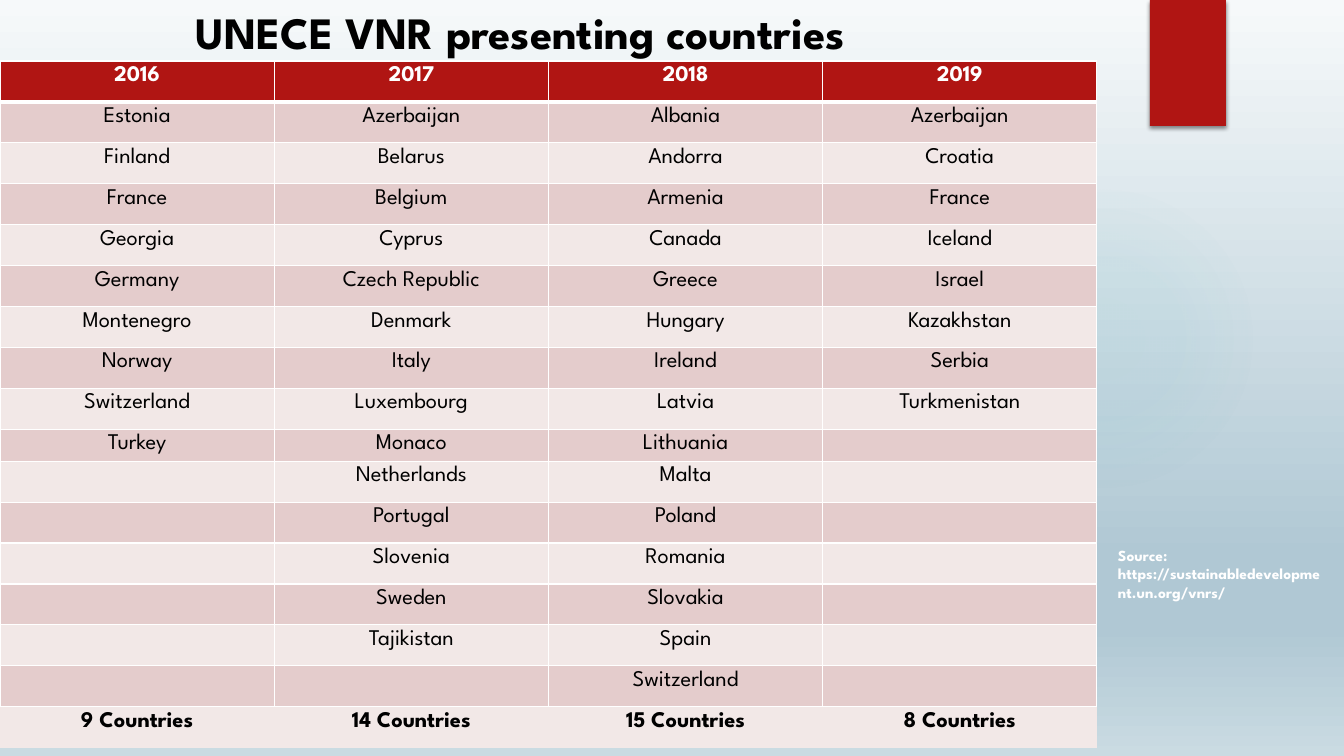
import pptx
import pptx.util
import pptx.oxml
import pptx.oxml.ns
from pptx.dml.color import RGBColor
from pptx.enum.shapes import MSO_SHAPE
from pptx.enum.text import MSO_ANCHOR, PP_ALIGN

FONT = "League Spartan"
COLORS = {"red": "B01513", "dark_band": "E4CCCC", "light_band": "F2E8E7",
          "white": "FFFFFF", "black": "000000", "glow": "50B9C1"}
SKY = [(0, "F6F9FA", 100), (74, "B0C8D4", 100), (83, "B0C8D4", 100), (100, "CADBE2", 100)]
GLOW = [(0, COLORS["glow"], 7), (36, COLORS["glow"], 6), (69, COLORS["glow"], 0)]

TITLE = "UNECE VNR presenting countries"
SOURCE = "Source: https://sustainabledevelopment.un.org/vnrs/"
COUNTRIES = {
    "2016": ["Estonia", "Finland", "France", "Georgia", "Germany", "Montenegro",
             "Norway", "Switzerland", "Turkey"],
    "2017": ["Azerbaijan", "Belarus", "Belgium", "Cyprus", "Czech Republic", "Denmark",
             "Italy", "Luxembourg", "Monaco", "Netherlands", "Portugal", "Slovenia",
             "Sweden", "Tajikistan"],
    "2018": ["Albania", "Andorra", "Armenia", "Canada", "Greece", "Hungary", "Ireland",
             "Latvia", "Lithuania", "Malta", "Poland", "Romania", "Slovakia", "Spain",
             "Switzerland"],
    "2019": ["Azerbaijan", "Croatia", "France", "Iceland", "Israel", "Kazakhstan",
             "Serbia", "Turkmenistan"],
}
TABLE_X, TABLE_Y, TABLE_W, TABLE_H = 0, 61, 1097, 687
SHORT_ROW, SHORT_H = 9, 32
CELL_TOP = 5

qn = pptx.oxml.ns.qn
NS = pptx.oxml.ns.nsdecls("a")


def px(n):
    return pptx.util.Emu(round(n * 914400 / 100.8))


def box(*lengths):
    return [px(n) for n in lengths]


def set_text(tf, text, size=16, color="black", bold=False, align=PP_ALIGN.LEFT):
    tf.word_wrap = True
    p = tf.paragraphs[0]
    p.alignment = align
    r = p.add_run()
    r.text = text
    r.font.name = FONT
    r.font.size = pptx.util.Pt(size)
    r.font.bold = bold
    r.font.color.rgb = RGBColor.from_string(COLORS[color])


def set_gradient(element, stops, direction):
    """Replace the solid fill inside element by a gradient of (percent, colour, alpha) stops."""
    gs = "".join(f'<a:gs pos="{pos * 1000}"><a:srgbClr val="{color}">'
                 f'<a:alpha val="{alpha * 1000}"/></a:srgbClr></a:gs>'
                 for pos, color, alpha in stops)
    grad = pptx.oxml.parse_xml(
        f'<a:gradFill {NS} rotWithShape="1"><a:gsLst>{gs}</a:gsLst>{direction}</a:gradFill>')
    solid = element.find(".//" + qn("a:solidFill"))
    solid.getparent().replace(solid, grad)


def add_shape(s, kind, *lengths, color):
    sp = s.shapes.add_shape(kind, *box(*lengths))
    sp.shadow.inherit = False
    sp.fill.solid()
    sp.fill.fore_color.rgb = RGBColor.from_string(COLORS[color])
    sp.line.fill.background()
    return sp


def set_borders(cell, widths):
    """Draw white borders; widths gives points for left, right, top and bottom."""
    tcPr = cell._tc.get_or_add_tcPr()
    for i, (side, width) in enumerate(zip("LRTB", widths)):
        fill = (f'<a:solidFill><a:srgbClr val="{COLORS["white"]}"/></a:solidFill>'
                if width else "<a:noFill/>")
        tcPr.insert(i, pptx.oxml.parse_xml(
            f'<a:ln{side} {NS} w="{width * 12700}">{fill}</a:ln{side}>'))


def shrink_empty(cell):
    """Keep an empty cell's default text size from stretching its row."""
    cell.text_frame.paragraphs[0]._p.append(
        pptx.oxml.parse_xml(f'<a:endParaRPr {NS} sz="1200"/>'))


def add_text(s, text, *lengths, **style):
    tf = s.shapes.add_textbox(*box(*lengths)).text_frame
    set_text(tf, text, **style)


def add_country_table(s):
    depth = max(len(names) for names in COUNTRIES.values())
    columns = [[year, *names, *[""] * (depth - len(names)), f"{len(names)} Countries"]
               for year, names in COUNTRIES.items()]
    rows = list(zip(*columns))
    last = len(rows) - 1
    row_h = (TABLE_H - SHORT_H) / last
    table = s.shapes.add_table(len(rows), len(columns),
                               *box(TABLE_X, TABLE_Y, TABLE_W, TABLE_H)).table
    for col in table.columns:
        col.width = px(TABLE_W / len(columns))
    for i, row in enumerate(rows):
        table.rows[i].height = px(SHORT_H if i == SHORT_ROW else row_h)
        fill = "red" if i == 0 else "dark_band" if i % 2 else "light_band"
        side = 0 if i == last else 1
        widths = (side, side, 3 if i == 1 else 1, 3 if i == 0 else side)
        for j, text in enumerate(row):
            cell = table.cell(i, j)
            cell.margin_top = px(CELL_TOP)
            cell.margin_bottom = 0
            cell.vertical_anchor = MSO_ANCHOR.TOP
            cell.fill.solid()
            cell.fill.fore_color.rgb = RGBColor.from_string(COLORS[fill])
            set_borders(cell, widths)
            if text:
                set_text(cell.text_frame, text, color="black" if i else "white",
                         bold=i in (0, last), align=PP_ALIGN.CENTER)
            else:
                shrink_empty(cell)


def main():
    prs = pptx.Presentation()
    prs.slide_width, prs.slide_height = box(1344, 756)
    s = prs.slides.add_slide(prs.slide_layouts[6])

    s.background.fill.solid()
    set_gradient(s.element.find(".//" + qn("p:bgPr")), SKY, '<a:lin ang="5400000" scaled="0"/>')

    glow = add_shape(s, MSO_SHAPE.OVAL, 949, 184, 310, 310, color="glow")
    set_gradient(glow.element.spPr, GLOW, '<a:path path="circle"><a:fillToRect '
                 'l="50000" t="50000" r="50000" b="50000"/></a:path>')

    ribbon = add_shape(s, MSO_SHAPE.RECTANGLE, 1150, 0, 76, 126, color="red")
    ribbon.element.spPr.find(qn("a:effectLst")).append(pptx.oxml.parse_xml(
        f'<a:outerShdw {NS} blurRad="38100" dist="25400" dir="5400000" rotWithShape="0">'
        f'<a:srgbClr val="{COLORS["black"]}"><a:alpha val="45000"/></a:srgbClr></a:outerShdw>'))

    add_text(s, TITLE, 186, 0, 944, 60, size=32, bold=True)
    add_country_table(s)
    add_text(s, SOURCE, 1108, 541, 226, 67, size=11, color="white", bold=True)
    prs.save("out.pptx")


if __name__ == "__main__":
    main()
